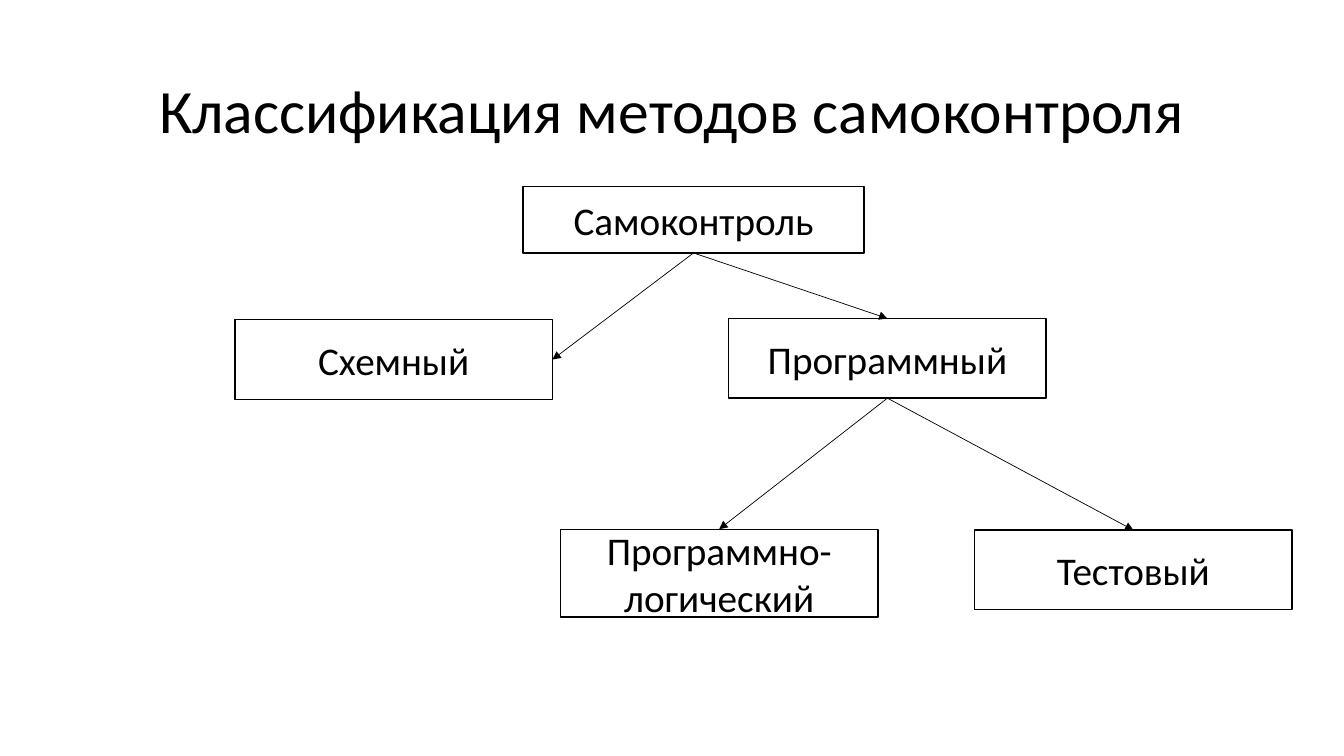
from lxml.etree import SubElement
from pptx import Presentation
from pptx.dml.color import RGBColor
from pptx.enum.shapes import MSO_CONNECTOR as Connector, MSO_SHAPE as Shape
from pptx.enum.text import MSO_ANCHOR as Anchor, PP_ALIGN as Align
from pptx.oxml.ns import qn
from pptx.util import Pt

BLACK = RGBColor(0, 0, 0)
WHITE = RGBColor(255, 255, 255)
FONT = "Calibri"
TOP, LEFT, BOTTOM, RIGHT = range(4)

TITLE = "Классификация методов самоконтроля"
TITLE_BOX = (66, 29, 828, 104.4)
METHODS = {
    "Самоконтроль": (373.7, 133.2, 243.4, 47.5),
    "Схемный": (167.8, 228.4, 226.8, 56.9),
    "Программно-логический": (400.3, 378, 226.8, 62.8),
    "Тестовый": (696.2, 378.7, 226.8, 56.9),
    "Программный": (520.5, 227.5, 226.8, 56.9),
}
ARROWS = [
    ("Самоконтроль", "Схемный", RIGHT),
    ("Программный", "Программно-логический", TOP),
    ("Программный", "Тестовый", TOP),
    ("Самоконтроль", "Программный", TOP),
]


def write_text(shape, text, size, line_spacing=1.0):
    frame = shape.text_frame
    frame.word_wrap = True
    frame.vertical_anchor = Anchor.MIDDLE
    paragraph = frame.paragraphs[0]
    paragraph.alignment = Align.CENTER
    paragraph.line_spacing = line_spacing
    run = paragraph.add_run()
    run.text = text
    run.font.name = FONT
    run.font.size = Pt(size)
    run.font.color.rgb = BLACK


def add_method(slide, text, box):
    shape = slide.shapes.add_shape(Shape.RECTANGLE, *map(Pt, box))
    shape.shadow.inherit = False
    shape.fill.solid()
    shape.fill.fore_color.rgb = WHITE
    shape.line.color.rgb = BLACK
    shape.line.width = Pt(1)
    write_text(shape, text, size=28)
    return shape


def add_arrow(slide, parent, child, child_side):
    arrow = slide.shapes.add_connector(Connector.STRAIGHT, 0, 0, 0, 0)
    arrow.begin_connect(parent, BOTTOM)
    arrow.end_connect(child, child_side)
    arrow.line.color.rgb = BLACK
    arrow.line.width = Pt(0.5)
    properties = arrow._element.spPr
    SubElement(properties.find(qn("a:ln")), qn("a:tailEnd"), type="triangle")
    SubElement(properties, qn("a:effectLst"))


def main():
    presentation = Presentation()
    presentation.slide_width = Pt(960)
    presentation.slide_height = Pt(540)
    slide = presentation.slides.add_slide(presentation.slide_layouts[6])

    title = slide.shapes.add_textbox(*map(Pt, TITLE_BOX))
    write_text(title, TITLE, size=44, line_spacing=0.9)

    shapes = {text: add_method(slide, text, box) for text, box in METHODS.items()}
    for parent, child, child_side in ARROWS:
        add_arrow(slide, shapes[parent], shapes[child], child_side)

    presentation.save("out.pptx")


if __name__ == "__main__":
    main()
